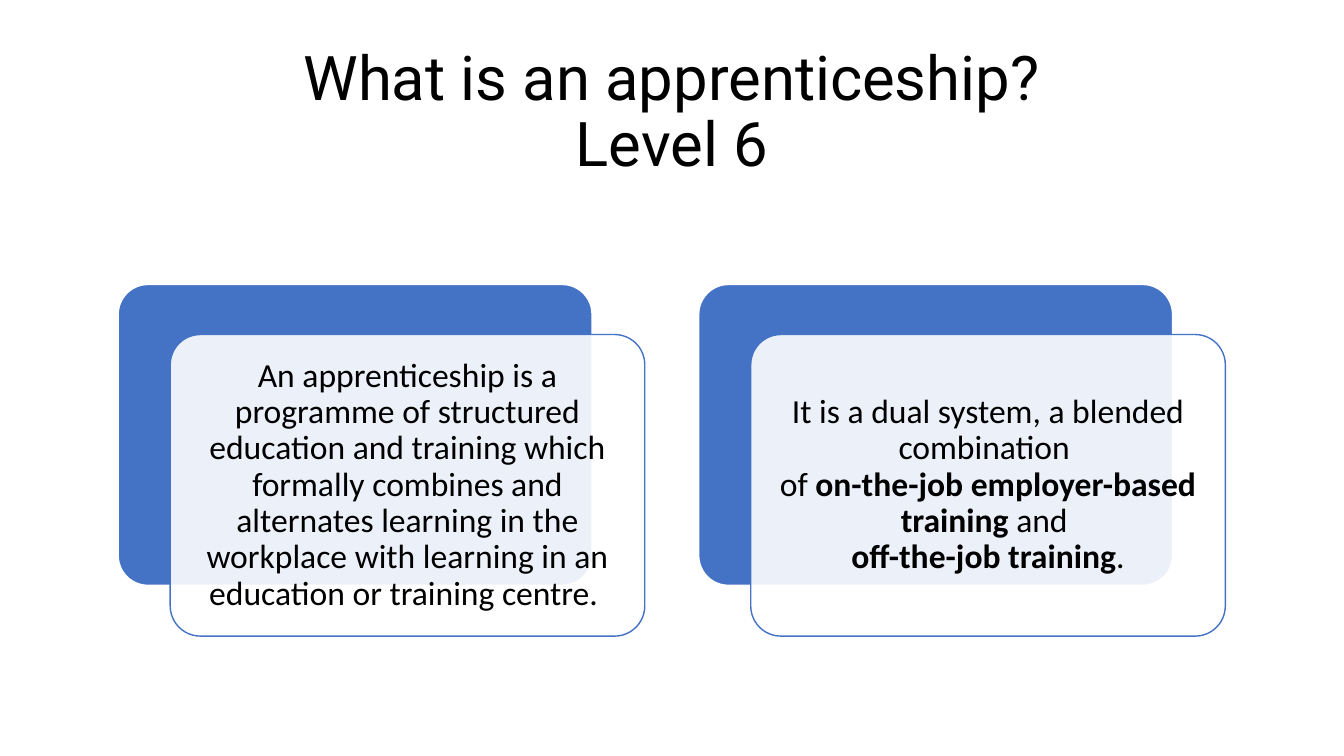
"""Build the slide that explains a level 6 apprenticeship."""
from lxml import etree
from pptx import Presentation
from pptx.dml.color import RGBColor
from pptx.enum import shapes, text
from pptx.oxml import ns
from pptx.util import Cm, Pt

TITLE = "What is an apprenticeship?\vLevel 6"
CARDS = [
    [[("An apprenticeship is a programme of structured education and training "
       "which formally combines and alternates learning in the workplace with "
       "learning in an education or training centre. ", False)]],
    [[("It is a dual system, a blended combination ", False)],
     [("of ", False), ("on-the-job employer-based training ", True), ("and ", False)],
     [("off-the-job training", True), (".", False)]],
]
BLUE, WHITE, BLACK = "4472C4", "FFFFFF", "000000"
LEFT, TOP, WIDTH, HEIGHT = 2.97, 7.16, 11.96, 7.6
PITCH, SHIFT_X, SHIFT_Y = 14.63, 1.32, 1.27


def paint(target, color):
    target.rgb = RGBColor.from_string(color)


def style(r, font, size, bold=False):
    r.font.name, r.font.size, r.font.bold = font, Pt(size), bold
    paint(r.font.color, BLACK)


def add_card(s, x, y, fill, line, weight):
    sp = s.shapes.add_shape(shapes.MSO_SHAPE.ROUNDED_RECTANGLE,
                            Cm(x), Cm(y), Cm(WIDTH), Cm(HEIGHT))
    sp.adjustments[0] = 0.1
    sp.shadow.inherit = False
    sp.fill.solid()
    paint(sp.fill.fore_color, fill)
    paint(sp.line.color, line)
    sp.line.width = Pt(weight)
    return sp


def set_opacity(sp, percent):
    color = sp.fill._xPr.find(".//" + ns.qn("a:srgbClr"))
    etree.SubElement(color, ns.qn("a:alpha")).set("val", str(percent * 1000))


def write_card(sp, lines):
    tf = sp.text_frame
    tf.word_wrap = True
    tf.vertical_anchor = text.MSO_ANCHOR.MIDDLE
    tf.margin_left = tf.margin_right = tf.margin_top = tf.margin_bottom = Cm(0.25)
    p = tf.paragraphs[0]
    p.alignment, p.line_spacing = text.PP_ALIGN.CENTER, 0.9
    for i, line in enumerate(lines):
        if i:
            p.add_line_break()
        for words, bold in line:
            r = p.add_run()
            r.text = words
            style(r, "Calibri", 24, bold)


def main():
    prs = Presentation()
    prs.slide_width, prs.slide_height = Cm(33.87), Cm(19.05)
    s = prs.slides.add_slide(prs.slide_layouts[5])

    title = s.shapes.title
    title.left, title.top, title.width, title.height = Cm(2.33), Cm(1.02), Cm(29.21), Cm(3.68)
    tf = title.text_frame
    tf.text = TITLE
    tf.word_wrap = True
    tf.vertical_anchor = text.MSO_ANCHOR.MIDDLE
    p = tf.paragraphs[0]
    p.alignment, p.line_spacing = text.PP_ALIGN.CENTER, 0.9
    for r in p.runs:
        style(r, "Roboto", 44)

    for i, lines in enumerate(CARDS):
        x = LEFT + i * PITCH
        add_card(s, x, TOP, BLUE, WHITE, 1.5)
        front = add_card(s, x + SHIFT_X, TOP + SHIFT_Y, WHITE, BLUE, 1)
        set_opacity(front, 90)
        write_card(front, lines)

    prs.save("out.pptx")


if __name__ == "__main__":
    main()
